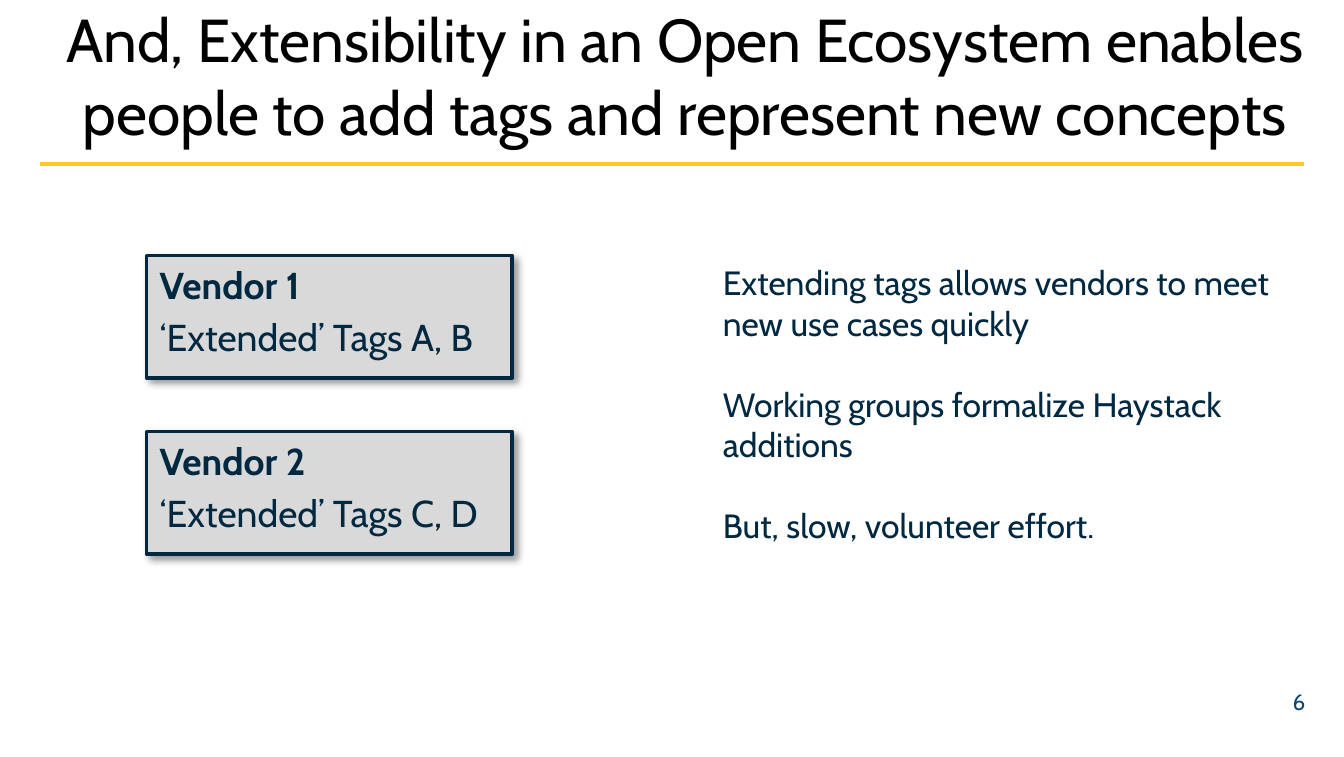
"""Build a slide on how vendors extend tags in an open ecosystem."""
from dataclasses import dataclass

from lxml import etree
from pptx import Presentation
from pptx.dml.color import RGBColor
from pptx.enum.shapes import MSO_CONNECTOR, MSO_SHAPE
from pptx.enum.text import MSO_ANCHOR, PP_ALIGN
from pptx.oxml.ns import qn
from pptx.util import Inches, Pt

LEFT, CENTER, RIGHT = PP_ALIGN.LEFT, PP_ALIGN.CENTER, PP_ALIGN.RIGHT
TOP, MIDDLE = MSO_ANCHOR.TOP, MSO_ANCHOR.MIDDLE
RECT = MSO_SHAPE.RECTANGLE
LINE = MSO_CONNECTOR.STRAIGHT
FONT = "Cabin"
NAVY, BLUE, GRAY, GOLD, BLACK = "002841", "0C456E", "D9D9D9", "FFC824", "000000"


@dataclass
class Box:
    left: float
    top: float
    width: float
    height: float

    def lengths(self) -> tuple:
        return tuple(Inches(v) for v in (self.left, self.top, self.width, self.height))


@dataclass
class Style:
    size: float
    color: str
    align: PP_ALIGN = LEFT
    anchor: MSO_ANCHOR = TOP
    gap: float = 0


@dataclass
class Vendor:
    name: str
    tags: str


VENDORS = [
    Vendor("Vendor 1", "‘Extended’ Tags A, B"),
    Vendor("Vendor 2", "‘Extended’ Tags C, D"),
]
POINTS = [
    "Extending tags allows vendors to meet new use cases quickly",
    "Working groups formalize Haystack additions",
    "But, slow, volunteer effort.",
]
TITLE = ("And, Extensibility in an Open Ecosystem enables people to add tags "
         "and represent new concepts")


def paint(color, code: str) -> None:
    color.rgb = RGBColor.from_string(code)


def write(shape, lines: list[str], style: Style) -> None:
    frame = shape.text_frame
    frame.word_wrap = True
    frame.vertical_anchor = style.anchor
    frame.text = "\n".join(lines)
    for i, para in enumerate(frame.paragraphs):
        para.alignment = style.align
        para.space_before = Pt(style.gap if i else 0)
        for run in para.runs:
            run.font.name = FONT
            run.font.size = Pt(style.size)
            paint(run.font.color, style.color)


def add_text(slide, box: Box, lines: list[str], style: Style) -> None:
    write(slide.shapes.add_textbox(*box.lengths()), lines, style)


def add_shadow(shape) -> None:
    shape.shadow.inherit = False
    effects = shape._element.spPr.find(qn("a:effectLst"))
    outer = etree.SubElement(effects, qn("a:outerShdw"), blurRad=str(Pt(4)),
                             dist=str(Pt(3)), dir="2700000", algn="tl", rotWithShape="0")
    color = etree.SubElement(outer, qn("a:srgbClr"), val=BLACK)
    etree.SubElement(color, qn("a:alpha"), val="40000")


def add_vendor(slide, box: Box, vendor: Vendor) -> None:
    shape = slide.shapes.add_shape(RECT, *box.lengths())
    shape.fill.solid()
    paint(shape.fill.fore_color, GRAY)
    paint(shape.line.color, NAVY)
    shape.line.width = Pt(2)
    add_shadow(shape)
    write(shape, [vendor.name, vendor.tags], Style(20, NAVY, gap=4))
    shape.text_frame.paragraphs[0].runs[0].font.bold = True


def add_rule(slide, left: float, right: float, top: float) -> None:
    rule = slide.shapes.add_connector(LINE, Inches(left), Inches(top),
                                      Inches(right), Inches(top))
    paint(rule.line.color, GOLD)
    rule.line.width = Pt(2)
    etree.SubElement(rule._element.spPr, qn("a:effectLst"))


def main() -> None:
    deck = Presentation()
    deck.slide_width, deck.slide_height = Inches(10), Inches(5.63)
    slide = deck.slides.add_slide(deck.slide_layouts[6])
    add_text(slide, Box(0.19, 0.26, 9.81, 0.59), [TITLE],
             Style(32.4, BLACK, CENTER, MIDDLE))
    add_text(slide, Box(7.48, 5.07, 2.33, 0.3), ["6"], Style(12, BLUE, RIGHT, MIDDLE))
    for i, vendor in enumerate(VENDORS):
        add_vendor(slide, Box(1.09, 1.9 + i * 1.31, 2.72, 0.91), vendor)
    add_text(slide, Box(5.28, 1.9, 4.53, 2.22), POINTS, Style(18, NAVY, gap=21.9))
    add_rule(slide, 0.3, 9.7, 1.22)
    deck.save("out.pptx")


if __name__ == "__main__":
    main()
